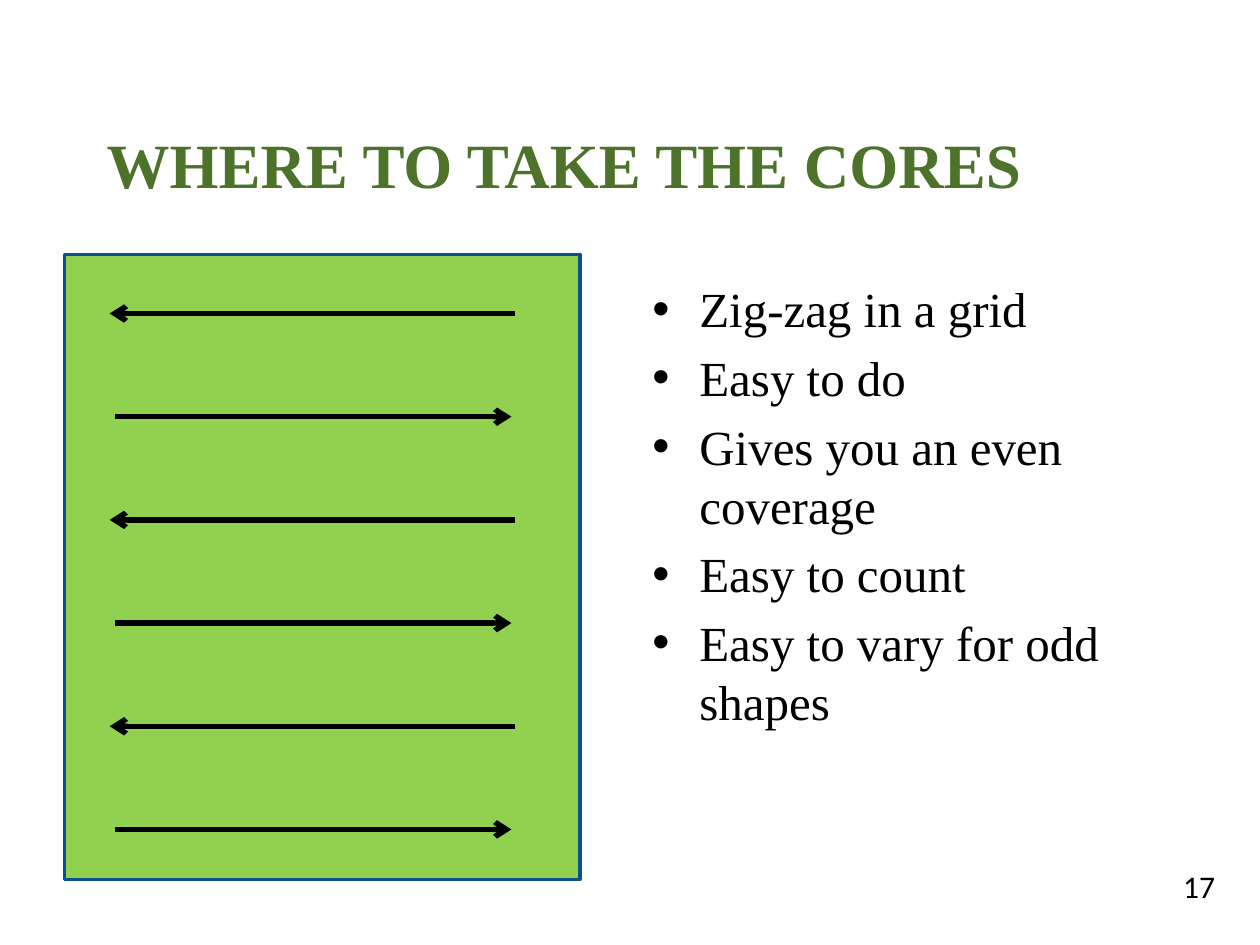
import pptx
import pptx.util
from pptx.dml.color import RGBColor
from pptx.enum.shapes import MSO_CONNECTOR, MSO_SHAPE
from pptx.enum.text import MSO_ANCHOR
from pptx.oxml.ns import qn
from lxml import etree

Cm, Pt = pptx.util.Cm, pptx.util.Pt

# Content
TITLE = "WHERE TO TAKE THE CORES"
TIPS = [
    "Zig-zag in a grid",
    "Easy to do",
    "Gives you an even coverage",
    "Easy to count",
    "Easy to vary for odd shapes",
]
PAGE_NUMBER = "17"

# Colours and fonts
BLACK = RGBColor(0x00, 0x00, 0x00)
TITLE_GREEN = RGBColor(0x4C, 0x73, 0x29)
FIELD_GREEN = RGBColor(0x92, 0xD0, 0x50)
FIELD_EDGE = RGBColor(0x0B, 0x52, 0x92)
SERIF, SANS = "Times New Roman", "Calibri"

# Walking path, in cm
PASSES = 6
FIRST_PASS, PASS_GAP = 6.32, 2.08
LEFTWARD = (10.39, 2.21)
RIGHTWARD = (2.31, 10.31)


def add_text(slide, box, lines, font, size, color, bold=False):
    frame = slide.shapes.add_textbox(*map(Cm, box)).text_frame
    frame.word_wrap = True
    frame.text = "\n".join(lines)
    for paragraph in frame.paragraphs:
        for run in paragraph.runs:
            run.font.name = font
            run.font.size = Pt(size)
            run.font.bold = bold
            run.font.color.rgb = color
    return frame


def add_bullet(paragraph):
    properties = paragraph._p.get_or_add_pPr()
    properties.set("marL", str(Cm(0.95)))
    properties.set("indent", str(-Cm(0.95)))
    etree.SubElement(properties, qn("a:buFont")).set("typeface", "Arial")
    etree.SubElement(properties, qn("a:buChar")).set("char", "•")


def add_pass(shapes, start, end, y):
    walk = shapes.add_connector(
        MSO_CONNECTOR.STRAIGHT, Cm(start), Cm(y), Cm(end), Cm(y))
    walk.line.color.rgb = BLACK
    walk.line.width = Pt(3)
    etree.SubElement(walk.line._get_or_add_ln(), qn("a:tailEnd")).set("type", "arrow")
    etree.SubElement(walk._element.spPr, qn("a:effectLst"))


def main():
    deck = pptx.Presentation()
    deck.slide_width, deck.slide_height = Cm(25.4), Cm(19.05)
    slide = deck.slides.add_slide(deck.slide_layouts[6])

    # Page number and title
    add_text(slide, (23.6, 17.35, 1.3, 1.27), [PAGE_NUMBER], SANS, 18, BLACK)
    title = add_text(slide, (1.9, 1.7, 21.6, 3.18), [TITLE], SERIF, 36, TITLE_GREEN, True)
    title.vertical_anchor = MSO_ANCHOR.MIDDLE

    # Bulleted tips
    tips = add_text(slide, (12.9, 5.5, 10.6, 11.43), TIPS, SERIF, 28, BLACK)
    for index, tip in enumerate(tips.paragraphs):
        if index:
            tip.space_before = Pt(5.6)
        add_bullet(tip)

    # Field with the zig-zag path
    diagram = slide.shapes.add_group_shape().shapes
    field = diagram.add_shape(
        MSO_SHAPE.RECTANGLE, Cm(1.3), Cm(5.13), Cm(10.39), Cm(12.6))
    field.shadow.inherit = False
    field.fill.solid()
    field.fill.fore_color.rgb = FIELD_GREEN
    field.line.color.rgb = FIELD_EDGE
    field.line.width = Pt(2)
    for index in range(PASSES):
        start, end = RIGHTWARD if index % 2 else LEFTWARD
        add_pass(diagram, start, end, FIRST_PASS + index * PASS_GAP)

    deck.save("out.pptx")


if __name__ == "__main__":
    main()
